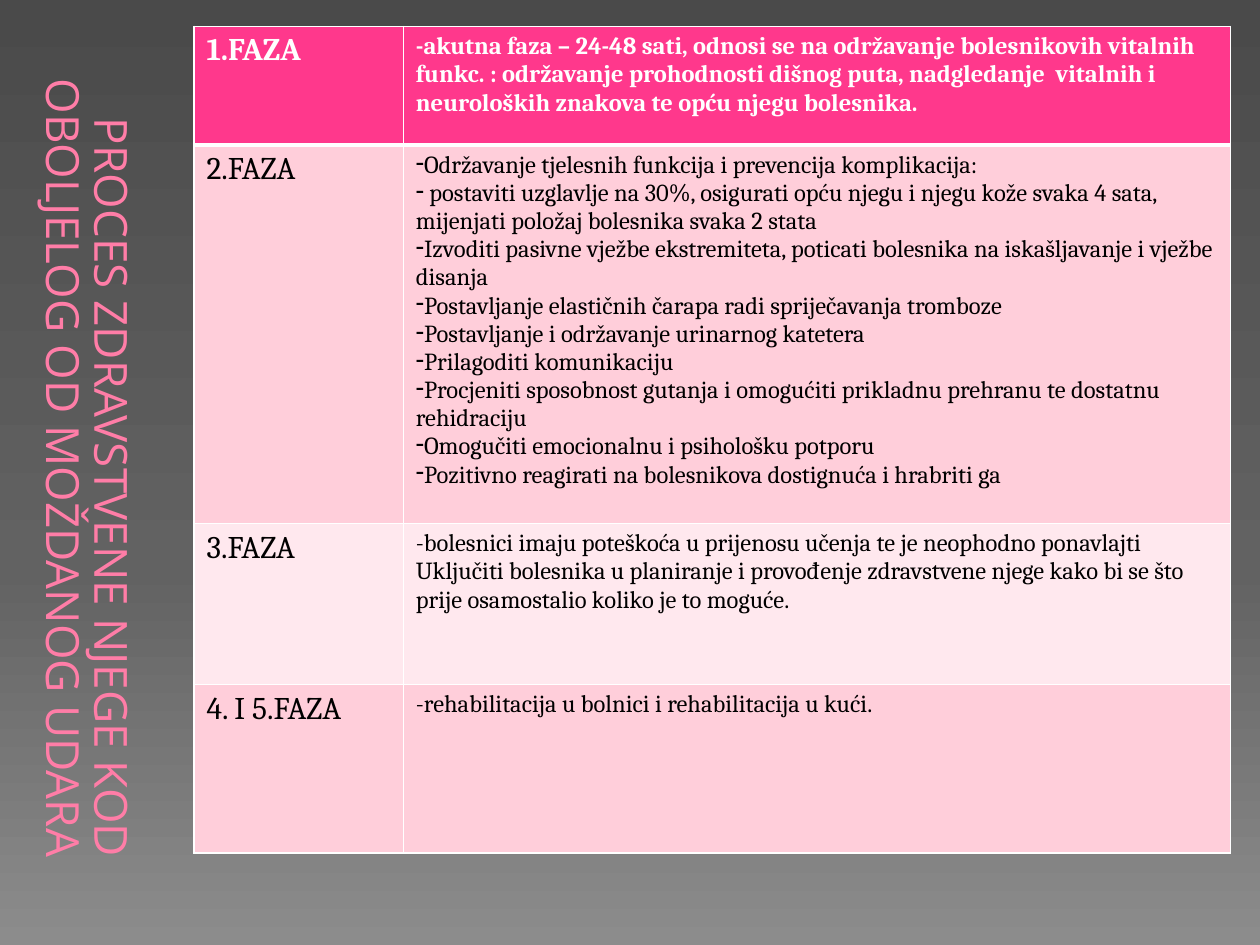
import copy

import pptx
import pptx.dml.color
import pptx.enum.text
import pptx.oxml
import pptx.oxml.ns
import pptx.util

Cm, Pt = pptx.util.Cm, pptx.util.Pt
qn = pptx.oxml.ns.qn

COLORS = {
    "bg_top": "4A4A4A", "bg_mid": "626262", "bg_bottom": "8C8C8C",
    "title": "FF7DA7", "title_line": "B12761",
    "header": "FF388C", "band_dark": "FFCEDA", "band_light": "FFE8EE",
    "white": "FFFFFF", "black": "000000",
}
TITLE = "PROCES ZDRAVSTVENE NJEGE KOD OBOLJELOG OD MOŽDANOG UDARA"

# Phase, row height in cm, fill, bulleted, paragraphs
PHASES = [
    ("1.FAZA", 2.39, "header", False, [
        "-akutna faza – 24-48 sati, odnosi se na održavanje bolesnikovih vitalnih "
        "funkc. : održavanje prohodnosti dišnog puta, nadgledanje  vitalnih i "
        "neuroloških znakova te opću njegu bolesnika."]),
    ("2.FAZA", 7.63, "band_dark", True, [
        "Održavanje tjelesnih funkcija i prevencija komplikacija:",
        " postaviti uzglavlje na 30%, osigurati opću njegu i njegu kože svaka 4 sata, "
        "mijenjati položaj bolesnika svaka 2 stata",
        "Izvoditi pasivne vježbe ekstremiteta, poticati bolesnika na iskašljavanje "
        "i vježbe disanja",
        "Postavljanje elastičnih čarapa radi spriječavanja tromboze",
        "Postavljanje i održavanje urinarnog katetera",
        "Prilagoditi komunikaciju",
        "Procjeniti sposobnost gutanja i omogućiti prikladnu prehranu te dostatnu "
        "rehidraciju",
        "Omogučiti emocionalnu i psihološku potporu",
        "Pozitivno reagirati na bolesnikova dostignuća i hrabriti ga"]),
    ("3.FAZA", 3.25, "band_light", False, [
        "-bolesnici imaju poteškoća u prijenosu učenja te je neophodno ponavlajti",
        "Uključiti bolesnika u planiranje i provođenje zdravstvene njege kako bi se "
        "što prije osamostalio koliko je to moguće."]),
    ("4. I 5.FAZA", 3.4, "band_dark", False, [
        "-rehabilitacija u bolnici i rehabilitacija u kući."]),
]


def rgb(name):
    return pptx.dml.color.RGBColor.from_string(COLORS[name])


def line_xml(tag, color, width):
    ns = pptx.oxml.ns.nsdecls("a")
    return pptx.oxml.parse_xml(
        f'<a:{tag} {ns} w="{Pt(width)}"><a:solidFill>'
        f'<a:srgbClr val="{COLORS[color]}"/></a:solidFill></a:{tag}>')


def add_run(p, text, font, size, color, bold=False):
    r = p.add_run()
    r.text = text
    r.font.name, r.font.size, r.font.bold = font, Pt(size), bold
    r.font.color.rgb = rgb(color)
    return r


def set_background(slide):
    fill = slide.background.fill
    fill.gradient()
    fill.gradient_angle = 270
    stops = slide.element.find(".//" + qn("a:gsLst"))
    stops.append(copy.deepcopy(stops[-1]))
    for stop, color, position in zip(fill.gradient_stops,
                                     ("bg_top", "bg_mid", "bg_bottom"), (0, 0.6, 1)):
        stop.color.rgb = rgb(color)
        stop.position = position


def add_title(slide, left, top, width, height):
    sp = slide.shapes.add_textbox(left, top, width, height)
    tf = sp.text_frame
    tf.word_wrap = True
    tf.vertical_anchor = pptx.enum.text.MSO_ANCHOR.BOTTOM
    # Text reads from top to bottom
    tf._txBody.bodyPr.set("vert", "vert")
    p = tf.paragraphs[0]
    p.alignment = pptx.enum.text.PP_ALIGN.RIGHT
    p.line_spacing = 0.88
    r = add_run(p, TITLE, "Open Sans", 26.1, "title")
    r.font._element.insert(0, line_xml("ln", "title_line", 0.5))


def fill_cell(cell, texts, size, fill, bulleted=False):
    header = fill == "header"
    cell.fill.solid()
    cell.fill.fore_color.rgb = rgb(fill)
    for i, text in enumerate(texts):
        tf = cell.text_frame
        p = tf.add_paragraph() if i else tf.paragraphs[0]
        add_run(p, text, "Cambria", size, "white" if header else "black", header)
        if bulleted:
            p._p.get_or_add_pPr().append(pptx.oxml.parse_xml(
                f'<a:buChar {pptx.oxml.ns.nsdecls("a")} char="-"/>'))


def add_borders(cell, top, bottom):
    tcPr = cell._tc.get_or_add_tcPr()
    sides = {"lnL": 1, "lnR": 1, "lnT": top, "lnB": bottom}
    for i, (tag, width) in enumerate(sides.items()):
        tcPr.insert(i, line_xml(tag, "white", width))


def add_phase_table(slide, left, top, width, height):
    table = slide.shapes.add_table(len(PHASES), 2, left, top, width, height).table
    table.columns[0].width = Cm(4.22)
    table.columns[1].width = width - Cm(4.22)
    for i, (phase, row_height, fill, bulleted, texts) in enumerate(PHASES):
        table.rows[i].height = Cm(row_height)
        fill_cell(table.cell(i, 0), [phase], 18, fill)
        fill_cell(table.cell(i, 1), texts, 14, fill, bulleted)
        for cell in table.rows[i].cells:
            add_borders(cell, 3 if i == 1 else 1, 3 if i == 0 else 1)


def main():
    prs = pptx.Presentation()
    prs.slide_width, prs.slide_height = Cm(25.4), Cm(19.05)
    slide = prs.slides.add_slide(prs.slide_layouts[6])
    set_background(slide)
    add_title(slide, Cm(0.61), Cm(1.02), Cm(2.54), Cm(16.51))
    add_phase_table(slide, Cm(3.91), Cm(0.53), Cm(20.9), Cm(16.67))
    prs.save("out.pptx")


if __name__ == "__main__":
    main()
